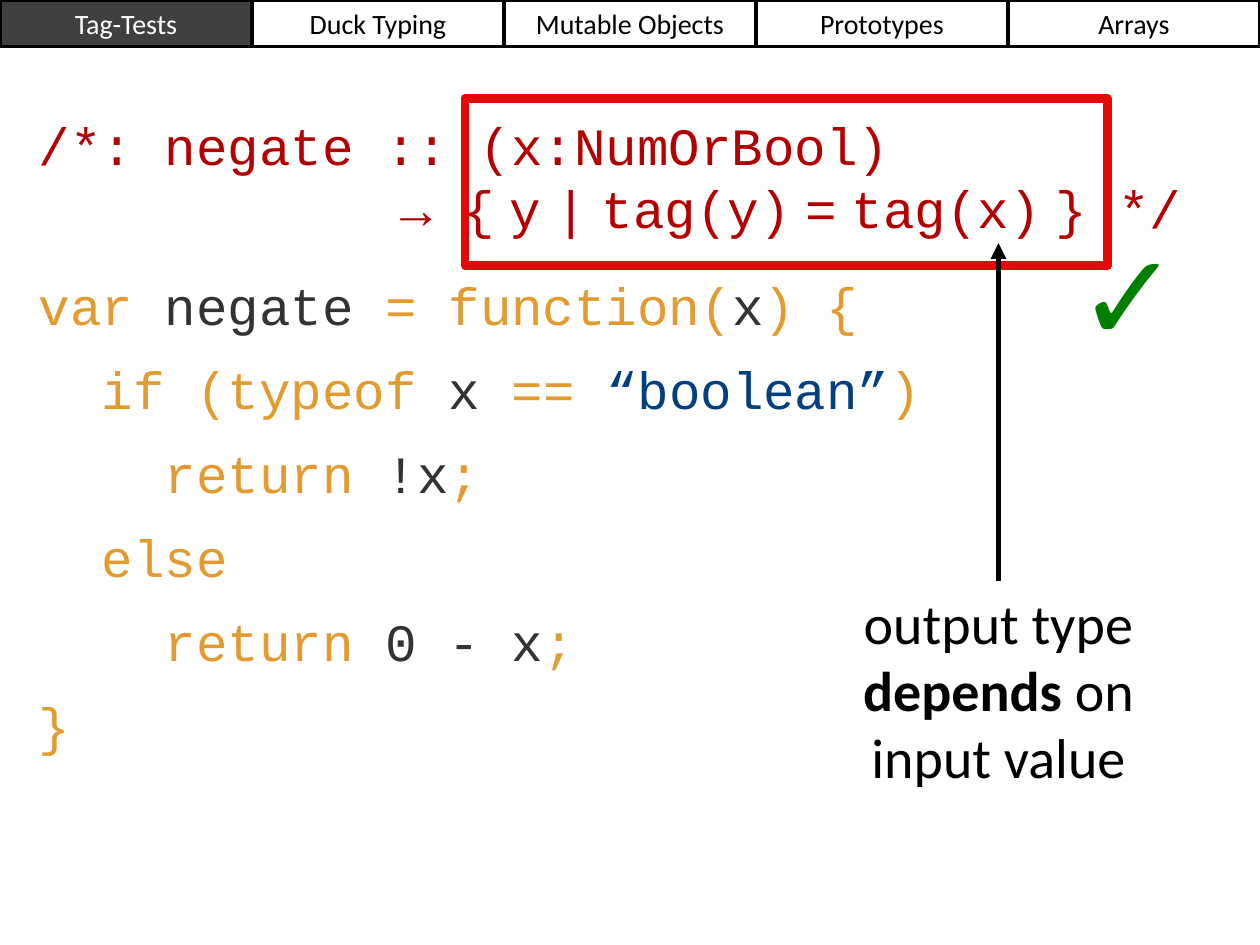
from lxml import etree
from pptx import Presentation
from pptx.dml.color import RGBColor
from pptx.enum.shapes import MSO_CONNECTOR, MSO_SHAPE
from pptx.enum.text import MSO_ANCHOR, MSO_AUTO_SIZE, PP_ALIGN
from pptx.oxml.ns import qn
from pptx.util import Inches, Pt

RECTANGLE = MSO_SHAPE.RECTANGLE
STRAIGHT = MSO_CONNECTOR.STRAIGHT
MIDDLE = MSO_ANCHOR.MIDDLE
CENTER = PP_ALIGN.CENTER
FIT = MSO_AUTO_SIZE.SHAPE_TO_FIT_TEXT

BLACK = RGBColor(0x00, 0x00, 0x00)
WHITE = RGBColor(0xFF, 0xFF, 0xFF)
DARK = RGBColor(0x40, 0x40, 0x40)
COMMENT = RGBColor(0xB3, 0x00, 0x00)
KEYWORD = RGBColor(0xE3, 0x9B, 0x30)
NAME = RGBColor(0x33, 0x33, 0x33)
STRING = RGBColor(0x00, 0x40, 0x80)
GREEN = RGBColor(0x00, 0x80, 0x00)
RED = RGBColor(0xE3, 0x09, 0x07)

SANS, MONO, NARROW = "Calibri", "Courier New", "Arial"
CODE_SIZE = 30
CHAR_WIDTH = 0.25  # one Courier New character at 30 pt

# Content
TABS = ["Tag-Tests", "Duck Typing", "Mutable Objects", "Prototypes", "Arrays"]
ACTIVE_TAB = "Tag-Tests"
SIGNATURE = "/*: negate :: (x:NumOrBool)\v→ "
RESULT_TYPE = ["{", "y", "|", "tag(y)", "=", "tag(x)", "}"]
SIGNATURE_END = " */"
CODE = [  # (indent in characters, spans)
    (0, [("var ", KEYWORD), ("negate", NAME), (" = function(", KEYWORD),
         ("x", NAME), (") {", KEYWORD)]),
    (2, [("if (typeof ", KEYWORD), ("x ", NAME), ("== ", KEYWORD),
         ("“boolean”", STRING), (")", KEYWORD)]),
    (4, [("return", KEYWORD), (" !x", NAME), (";", KEYWORD)]),
    (2, [("else", KEYWORD)]),
    (4, [("return ", KEYWORD), ("0 - x", NAME), (";", KEYWORD)]),
    (0, [("}", KEYWORD)]),
]
NOTE = [("output type ", False), ("depends", True), (" on input value", False)]


def add_span(para, text, font, size, color, bold=None):
    span = para.add_run()
    span.text = text
    style(span.font, font, size, color, bold)


def style(font, name, size, color, bold=None):
    font.name, font.size, font.bold = name, Pt(size), bold
    font.color.rgb = color


def add_box(shapes, left, top, width, height, wrap=True, margin=None):
    box = shapes.add_textbox(Inches(left), Inches(top), Inches(width), Inches(height))
    frame = box.text_frame
    frame.word_wrap, frame.auto_size = wrap, FIT
    if margin is not None:
        frame.margin_left = frame.margin_right = Inches(margin)
        frame.margin_top = frame.margin_bottom = Inches(margin)
    return box


def add_rectangle(shapes, left, top, width, height, line_color, line_width):
    shape = shapes.add_shape(RECTANGLE, Inches(left), Inches(top),
                             Inches(width), Inches(height))
    shape.shadow.inherit = False
    shape.fill.background()
    shape.line.color.rgb = line_color
    shape.line.width = Pt(line_width)
    return shape


def set_indent(para, left, first=0):
    properties = para._p.get_or_add_pPr()
    properties.set("marL", str(Inches(left)))
    properties.set("indent", str(Inches(first)))


def add_tabs(shapes):
    width = 10 / len(TABS)
    for index, label in enumerate(TABS):
        tab = add_rectangle(shapes, index * width, 0, width, 0.37, BLACK, 2)
        active = label == ACTIVE_TAB
        if active:
            tab.fill.solid()
            tab.fill.fore_color.rgb = DARK
        tab.text_frame.text = label
        tab.text_frame.vertical_anchor = MIDDLE
        para = tab.text_frame.paragraphs[0]
        para.alignment = CENTER
        style(para.runs[0].font, SANS, 16, WHITE if active else BLACK)


def add_signature(shapes):
    box = add_box(shapes, 0.31, 0.9, 9.1, 1.01, margin=0)
    para = box.text_frame.paragraphs[0]
    para.space_after = Pt(24)
    set_indent(para, 2.87, -2.87)  # hanging: the second line starts at the arrow
    para.text = SIGNATURE
    for span in para.runs:
        style(span.font, MONO, CODE_SIZE, COMMENT)
    for index, part in enumerate(RESULT_TYPE):
        if index:
            add_span(para, " ", NARROW, CODE_SIZE, COMMENT)
        add_span(para, part, MONO, CODE_SIZE, COMMENT)
    add_span(para, SIGNATURE_END, MONO, CODE_SIZE, COMMENT)


def add_code(shapes):
    frame = add_box(shapes, 0.31, 2.17, 7.16, 3.87, margin=0).text_frame
    for index, (indent, spans) in enumerate(CODE):
        para = frame.add_paragraph() if index else frame.paragraphs[0]
        para.space_after = Pt(12)
        set_indent(para, indent * CHAR_WIDTH)
        for text, color in spans:
            add_span(para, text, MONO, CODE_SIZE, color)


def add_check(shapes):
    frame = add_box(shapes, 8.45, 1.68, 0.94, 1.28, wrap=False).text_frame
    frame.vertical_anchor = MIDDLE
    frame.paragraphs[0].alignment = CENTER
    add_span(frame.paragraphs[0], "✓", NARROW, 70, GREEN)


def add_callout(shapes):
    add_rectangle(shapes, 3.69, 0.78, 5.1, 1.33, RED, 5)

    note = add_box(shapes, 6.64, 4.61, 2.57, 1.72)
    note.text_frame.vertical_anchor = MIDDLE
    para = note.text_frame.paragraphs[0]
    para.alignment = CENTER
    for text, bold in NOTE:
        add_span(para, text, SANS, 32, BLACK, bold)

    arrow = shapes.add_connector(STRAIGHT, Inches(7.93), Inches(4.61),
                                 Inches(7.93), Inches(1.93))
    arrow.begin_connect(note, 0)
    arrow.end_x = arrow.begin_x
    arrow.line.color.rgb = BLACK
    arrow.line.width = Pt(3)
    etree.SubElement(arrow.line._get_or_add_ln(), qn("a:tailEnd"), type="triangle")
    etree.SubElement(arrow._element.spPr, qn("a:effectLst"))


def main():
    deck = Presentation()
    deck.slide_width, deck.slide_height = Inches(10), Inches(7.5)
    page = deck.slides.add_slide(deck.slide_layouts[6])
    add_tabs(page.shapes)
    add_signature(page.shapes)
    add_code(page.shapes)
    add_check(page.shapes)
    add_callout(page.shapes.add_group_shape().shapes)
    deck.save("out.pptx")


if __name__ == "__main__":
    main()
